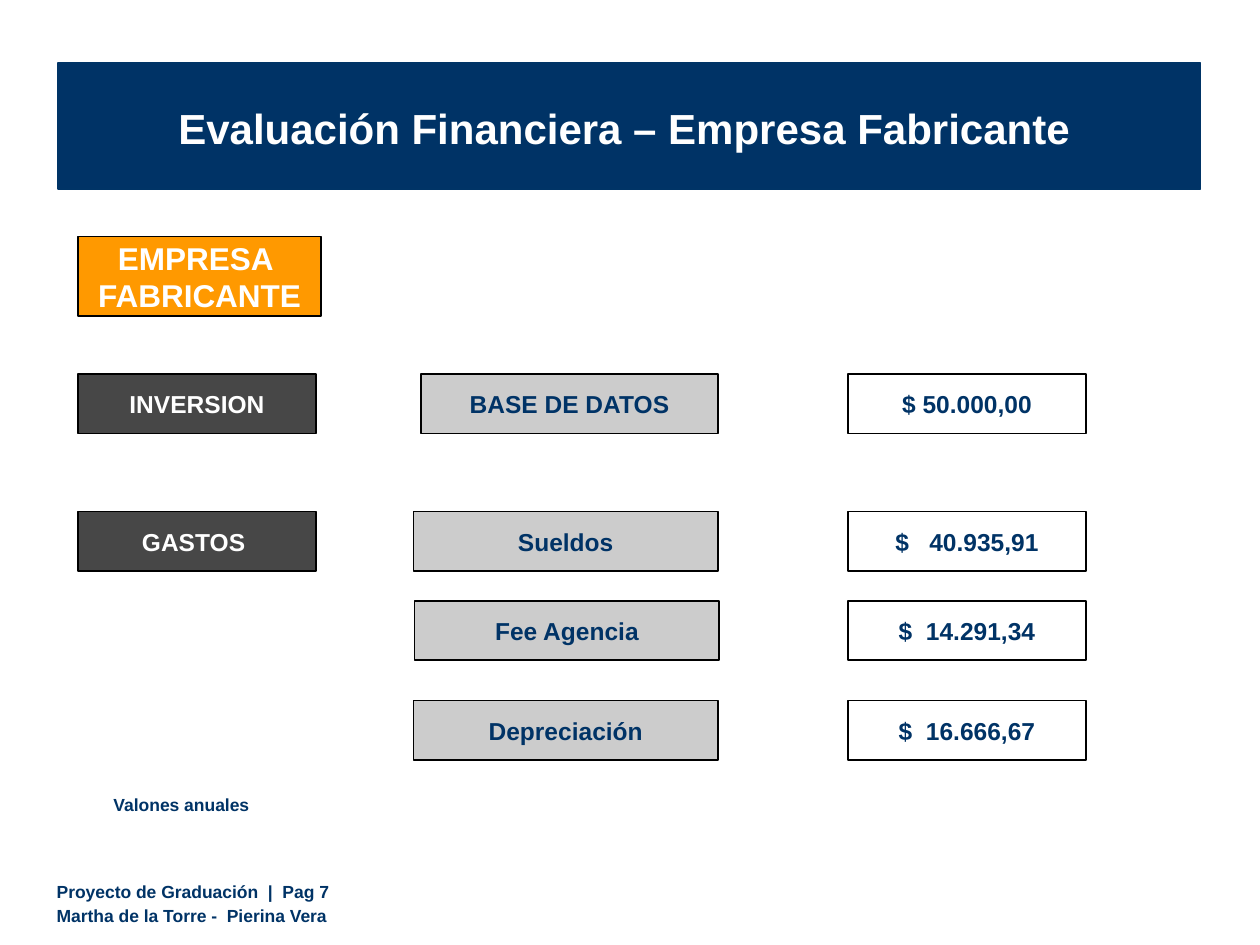
from dataclasses import dataclass
from typing import Optional

from lxml.etree import SubElement
from pptx import Presentation
from pptx.dml.color import RGBColor
from pptx.enum.shapes import MSO_SHAPE as Shp
from pptx.enum.text import MSO_ANCHOR as Anchor, PP_ALIGN as Align
from pptx.oxml.ns import qn
from pptx.util import Pt


@dataclass(frozen=True)
class Theme:
    font: str = "Arial"
    navy: str = "003366"
    band_line: str = "003466"
    orange: str = "FF9900"
    dark: str = "333333"
    gray: str = "C7C7C7"
    white: str = "FFFFFF"
    black: str = "000000"
    title: int = 24
    heading: int = 18
    body: int = 14
    small: int = 10


@dataclass(frozen=True)
class Box:
    x: float
    y: float
    w: float
    h: float
    fill: Optional[str] = None
    line: str = "000000"
    line_w: float = 1
    opacity: int = 100


@dataclass(frozen=True)
class Row:
    y: float
    label: str
    amount: str
    label_x: float = 236.2
    label_w: float = 174.2
    group: str = ""


T = Theme()
GROUP_X, AMOUNT_X = 44.6, 484.6
CELL_W, CELL_H = 136, 34
ROWS = [
    Row(213.8, "BASE DE DATOS", "$ 50.000,00", 240.5, 169.9, "INVERSION"),
    Row(292.3, "Sueldos", "$   40.935,91", group="GASTOS "),
    Row(343.4, "Fee Agencia", "$  14.291,34", label_x=236.9),
    Row(400.3, "Depreciación", "$  16.666,67"),
]


def write(sp, text: str, *, size: int, color: str = T.navy, align=Align.CENTER,
          anchor=Anchor.MIDDLE, wrap: bool = False, before: float = 0,
          inset: Optional[float] = None) -> None:
    tf = sp.text_frame
    tf.text = text
    tf.word_wrap = wrap
    tf.vertical_anchor = anchor
    if inset is not None:
        tf.margin_left = tf.margin_right = Pt(inset)
        tf.margin_top = tf.margin_bottom = Pt(inset)
    for p in tf.paragraphs:
        p.alignment = align
        p.space_before = Pt(before)
        for r in p.runs:
            r.font.name = T.font
            r.font.size = Pt(size)
            r.font.bold = True
            r.font.color.rgb = RGBColor.from_string(color)


def draw(s, b: Box):
    sp = s.shapes.add_shape(Shp.RECTANGLE, Pt(b.x), Pt(b.y), Pt(b.w), Pt(b.h))
    sp.shadow.inherit = False
    sp.line.color.rgb = RGBColor.from_string(b.line)
    sp.line.width = Pt(b.line_w)
    if b.fill is None:
        sp.fill.background()
        return sp
    sp.fill.solid()
    sp.fill.fore_color.rgb = RGBColor.from_string(b.fill)
    if b.opacity < 100:
        clr = sp.element.spPr.find(qn("a:solidFill")).find(qn("a:srgbClr"))
        SubElement(clr, qn("a:alpha")).set("val", str(b.opacity * 1000))
    return sp


def cell(s, x: float, y: float, w: float, text: str, fill: str, color: str = T.navy) -> None:
    sp = draw(s, Box(x, y, w, CELL_H, fill, opacity=90))
    write(sp, text, size=T.body, color=color)


def draw_row(s, row: Row) -> None:
    if row.group:
        cell(s, GROUP_X, row.y, CELL_W, row.group, T.dark, T.white)
    cell(s, row.label_x, row.y, row.label_w, row.label, T.gray)
    cell(s, AMOUNT_X, row.y, CELL_W, row.amount, T.white)


def main() -> None:
    prs = Presentation()
    prs.slide_width, prs.slide_height = Pt(720), Pt(540)
    s = prs.slides.add_slide(prs.slide_layouts[5])

    title = s.shapes.title
    title.left, title.top, title.width, title.height = Pt(33.8), Pt(54.7), Pt(645.8), Pt(36)
    write(title, "Evaluación Financiera – Empresa Fabricante", size=T.title,
          color=T.white, anchor=Anchor.BOTTOM, wrap=True)
    band = draw(s, Box(33.1, 36, 653, 72, T.navy, T.band_line, 0.75))
    title.element.addprevious(band.element)

    company = draw(s, Box(GROUP_X, 135.2, 139, 45.4, T.orange))
    write(company, "EMPRESA \vFABRICANTE", size=T.heading, color=T.white)

    for row in ROWS:
        draw_row(s, row)

    note = draw(s, Box(GROUP_X, 450, 118, 20, line=T.white))
    write(note, "Valones anuales", size=T.small, anchor=Anchor.TOP, wrap=True, before=5)

    footer = s.shapes.add_textbox(Pt(32.4), Pt(503.3), Pt(437), Pt(26))
    write(footer, "Proyecto de Graduación  |  Pag 7\nMartha de la Torre -  Pierina Vera",
          size=T.small, align=Align.LEFT, anchor=Anchor.TOP, wrap=True, before=2, inset=0)

    prs.save("out.pptx")


if __name__ == "__main__":
    main()
